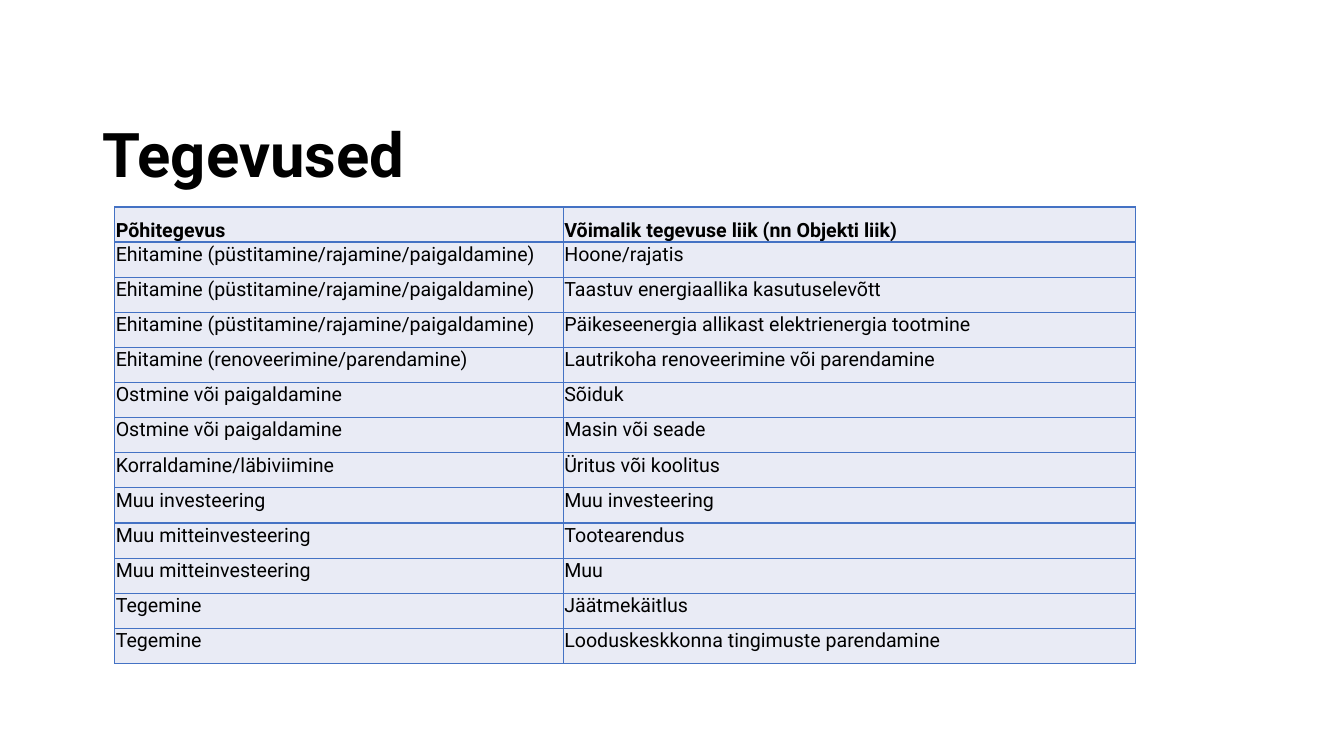
import pptx
import pptx.util
import pptx.dml.color
import pptx.enum.text
import pptx.oxml
import pptx.oxml.ns

Pt = pptx.util.Pt
Anchor = pptx.enum.text.MSO_ANCHOR

BUILDING = "Ehitamine (püstitamine/rajamine/paigaldamine)"
ACTIVITIES = [
    ("Põhitegevus", "Võimalik tegevuse liik (nn Objekti liik)"),
    (BUILDING, "Hoone/rajatis"),
    (BUILDING, "Taastuv energiaallika kasutuselevõtt"),
    (BUILDING, "Päikeseenergia allikast elektrienergia tootmine"),
    ("Ehitamine (renoveerimine/parendamine)", "Lautrikoha renoveerimine või parendamine"),
    ("Ostmine või paigaldamine", "Sõiduk"),
    ("Ostmine või paigaldamine", "Masin või seade"),
    ("Korraldamine/läbiviimine", "Üritus või koolitus"),
    ("Muu investeering", "Muu investeering"),
    ("Muu mitteinvesteering", "Tootearendus"),
    ("Muu mitteinvesteering", "Muu"),
    ("Tegemine", "Jäätmekäitlus"),
    ("Tegemine", "Looduskeskkonna tingimuste parendamine"),
]
COLUMN_WIDTHS = (320.4, 408.96)
CELL_FORMAT = {
    "margin_left": Pt(0.7),
    "margin_right": Pt(0.7),
    "margin_top": Pt(0.7),
    "margin_bottom": 0,
}


def color(hex_text):
    return pptx.dml.color.RGBColor.from_string(hex_text)


def set_values(target, values):
    for name, value in values.items():
        setattr(target, name, value)


def write(frame, text, size, bold):
    para = frame.paragraphs[0]
    span = para.add_run()
    span.text = text
    set_values(span.font, {"name": "Roboto", "size": Pt(size), "bold": bold})
    span.font.color.rgb = color("000000")
    return para


def add_borders(cell, hex_text, width):
    properties = cell._tc.get_or_add_tcPr()
    for position, side in enumerate("LRTB"):
        line = pptx.oxml.parse_xml(
            f'<a:ln{side} {pptx.oxml.ns.nsdecls("a")} w="{Pt(width)}">'
            f'<a:solidFill><a:srgbClr val="{hex_text}"/></a:solidFill></a:ln{side}>'
        )
        properties.insert(position, line)


def add_title(page, left, top, width, height):
    box = page.shapes.add_textbox(Pt(left), Pt(top), Pt(width), Pt(height))
    set_values(box.text_frame, {"word_wrap": True, "vertical_anchor": Anchor.MIDDLE})
    write(box.text_frame, "Tegevused", 44, True).line_spacing = 0.9


def add_activity_table(page, left, top, width, height):
    frame = page.shapes.add_table(
        len(ACTIVITIES), len(COLUMN_WIDTHS), Pt(left), Pt(top), Pt(width), Pt(height)
    )
    table = frame.table
    set_values(table, {"first_row": False, "horz_banding": False})
    for column, share in zip(table.columns, COLUMN_WIDTHS):
        column.width = Pt(width * share / sum(COLUMN_WIDTHS))
    for row_number, texts in enumerate(ACTIVITIES):
        is_header = row_number == 0
        table.rows[row_number].height = Pt(height / len(ACTIVITIES))
        for cell, text in zip(table.rows[row_number].cells, texts):
            set_values(cell, CELL_FORMAT)
            cell.vertical_anchor = Anchor.BOTTOM if is_header else Anchor.TOP
            cell.fill.solid()
            cell.fill.fore_color.rgb = color("E9EBF5")
            add_borders(cell, "4472C4", 1)
            write(cell.text_frame, text, 14, is_header)


def main():
    deck = pptx.Presentation()
    set_values(deck, {"slide_width": Pt(960), "slide_height": Pt(540)})
    page = deck.slides.add_slide(deck.slide_layouts[6])
    add_title(page, 66, 60.5, 828, 104.4)
    add_activity_table(page, 82, 147.8, sum(COLUMN_WIDTHS), 326.3)
    deck.save("out.pptx")


if __name__ == "__main__":
    main()
